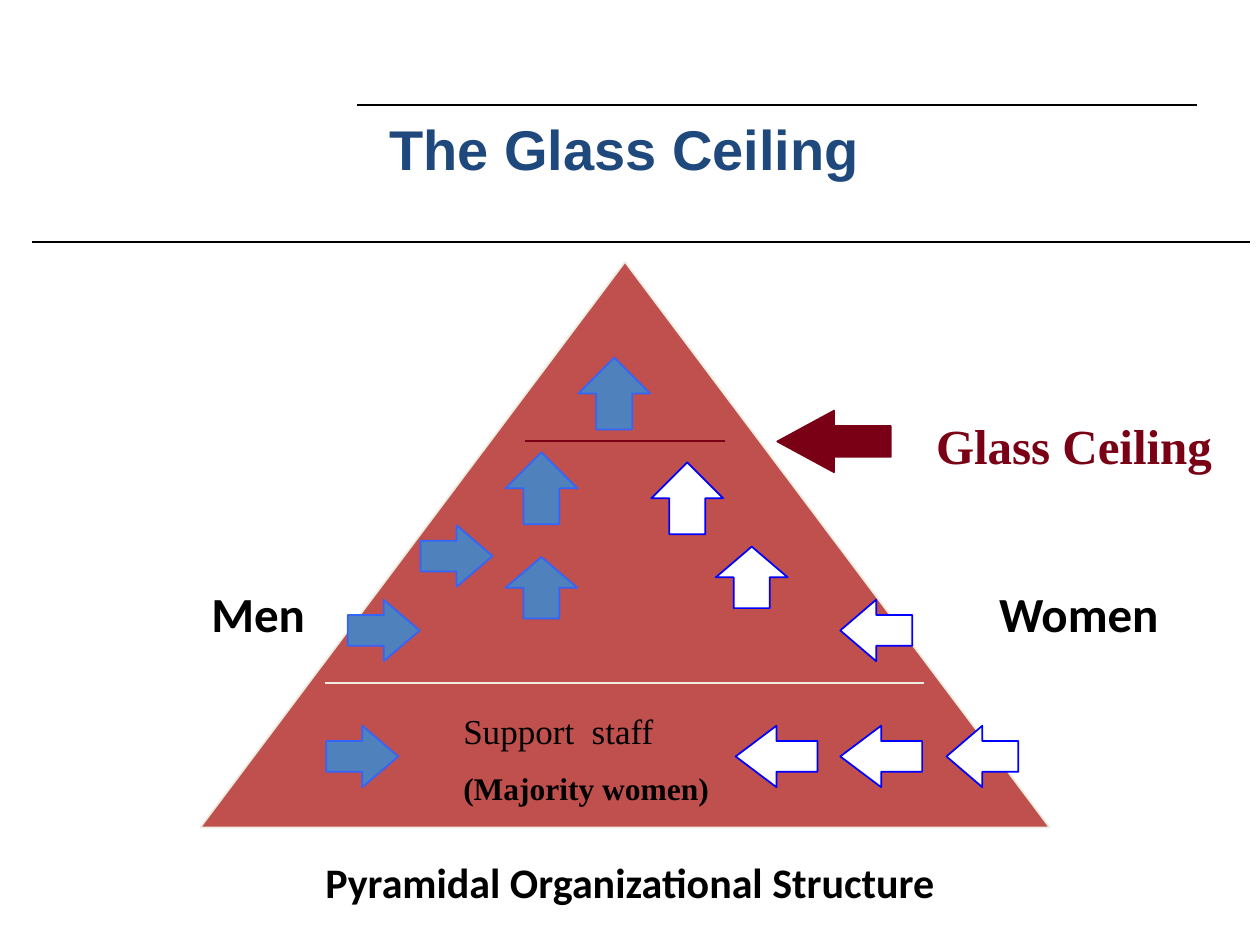
from dataclasses import dataclass

from lxml import etree
from pptx import Presentation
from pptx.dml.color import RGBColor
from pptx.enum.shapes import MSO_CONNECTOR, MSO_SHAPE
from pptx.enum.text import MSO_ANCHOR, PP_ALIGN
from pptx.oxml.ns import qn
from pptx.util import Cm, Pt

RIGHT, LEFT, UP = MSO_SHAPE.RIGHT_ARROW, MSO_SHAPE.LEFT_ARROW, MSO_SHAPE.UP_ARROW
TRIANGLE = MSO_SHAPE.ISOSCELES_TRIANGLE
STRAIGHT = MSO_CONNECTOR.STRAIGHT
ALIGN_LEFT, ALIGN_CENTER = PP_ALIGN.LEFT, PP_ALIGN.CENTER
MIDDLE = MSO_ANCHOR.MIDDLE


@dataclass(frozen=True)
class Theme:
    black: RGBColor = RGBColor(0x00, 0x00, 0x00)
    navy: RGBColor = RGBColor(0x1F, 0x49, 0x7D)
    red: RGBColor = RGBColor(0xC0, 0x50, 0x4D)
    cream: RGBColor = RGBColor(0xEE, 0xEC, 0xE1)
    maroon: RGBColor = RGBColor(0x79, 0x00, 0x15)
    men_fill: RGBColor = RGBColor(0x4F, 0x81, 0xBD)
    men_line: RGBColor = RGBColor(0x33, 0x65, 0xFB)
    women_fill: RGBColor = RGBColor(0xFF, 0xFF, 0xFF)
    women_line: RGBColor = RGBColor(0x00, 0x00, 0xFF)
    heading: str = "Arial"
    sans: str = "Calibri"
    serif: str = "Times New Roman"
    title_size: Pt = Pt(32)
    label_size: Pt = Pt(28)
    caption_size: Pt = Pt(24)
    staff_size: Pt = Pt(20)
    note_size: Pt = Pt(18)
    stroke: Pt = Pt(1)


theme = Theme()
prs = Presentation()
prs.slide_width, prs.slide_height = Cm(25.4), Cm(19.05)
slide = prs.slides.add_slide(prs.slide_layouts[5])


def add_figure(kind, box, fill, line):
    figure = slide.shapes.add_shape(kind, *map(Cm, box))
    figure.shadow.inherit = False
    figure.fill.solid()
    figure.fill.fore_color.rgb = fill
    figure.line.color.rgb = line
    figure.line.width = theme.stroke
    return figure


def style_text(paragraph, text, face, size, color, bold, align):
    paragraph.text = text
    paragraph.alignment = align
    font = paragraph.font
    font.name, font.size, font.bold = face, size, bold
    font.color.rgb = color


title = slide.shapes.title
title.left, title.top, title.width, title.height = map(Cm, (0.46, 1.12, 24.26, 3.73))
title.text_frame.vertical_anchor = MIDDLE
style_text(title.text_frame.paragraphs[0], "The Glass Ceiling", theme.heading,
           theme.title_size, theme.navy, True, ALIGN_CENTER)

add_figure(TRIANGLE, (4.04, 5.28, 17.12, 11.4), theme.red, theme.cream)

for start, end, height, color in (
    (7.19, 24.13, 2.11, theme.black),
    (0.64, 25.2, 4.88, theme.black),
    (6.55, 18.62, 13.77, theme.cream),
    (10.59, 14.61, 8.89, theme.maroon),
):
    rule = slide.shapes.add_connector(STRAIGHT, Cm(start), Cm(height), Cm(end), Cm(height))
    rule.line.color.rgb = color
    rule.line.width = theme.stroke
    etree.SubElement(rule._element.spPr, qn("a:effectLst"))

men_steps = (
    (RIGHT, (6.58, 14.63, 1.45, 1.24)),
    (RIGHT, (7.01, 12.09, 1.45, 1.24)),
    (RIGHT, (8.48, 10.59, 1.45, 1.24)),
    (UP, (10.19, 11.23, 1.45, 1.24)),
    (UP, (10.19, 9.12, 1.45, 1.45)),
    (UP, (11.66, 7.21, 1.45, 1.45)),
)
women_steps = (
    (LEFT, (19.08, 14.63, 1.45, 1.24)),
    (LEFT, (16.94, 14.63, 1.65, 1.24)),
    (LEFT, (14.83, 14.63, 1.65, 1.24)),
    (LEFT, (16.94, 12.09, 1.45, 1.24)),
    (UP, (14.43, 11.02, 1.45, 1.24)),
    (UP, (13.13, 9.32, 1.45, 1.45)),
)
ceiling_pointer = ((LEFT, (15.67, 8.28, 2.29, 1.24)),)

for steps, fill, line in (
    (men_steps, theme.men_fill, theme.men_line),
    (women_steps, theme.women_fill, theme.women_line),
    (ceiling_pointer, theme.maroon, theme.maroon),
):
    for direction, box in steps:
        arrow = add_figure(direction, box, fill, line)
        width, height = box[2:]
        length = height if direction == UP else width
        arrow.adjustments[0] = 0.5
        arrow.adjustments[1] = length / 2 / min(width, height)

for box, face, color, align, lines in (
    ((9.09, 14.17, 5.54, 2.26), theme.serif, theme.black, ALIGN_LEFT,
     (("Support  staff", theme.staff_size, False),
      ("(Majority women)", theme.note_size, True))),
    ((0, 17.15, 25.4, 1.27), theme.sans, theme.black, ALIGN_CENTER,
     (("Pyramidal Organizational Structure", theme.caption_size, True),)),
    ((18.62, 8.26, 6.58, 1.45), theme.serif, theme.maroon, ALIGN_LEFT,
     (("Glass Ceiling", theme.label_size, True),)),
    ((19.89, 11.63, 4.04, 1.45), theme.sans, theme.black, ALIGN_LEFT,
     (("Women", theme.label_size, True),)),
    ((4.01, 11.63, 2.57, 1.45), theme.sans, theme.black, ALIGN_LEFT,
     (("Men", theme.label_size, True),)),
):
    frame = slide.shapes.add_textbox(*map(Cm, box)).text_frame
    frame.word_wrap = True
    for index, (text, size, bold) in enumerate(lines):
        paragraph = frame.add_paragraph() if index else frame.paragraphs[0]
        style_text(paragraph, text, face, size, color, bold, align)
        if index:
            paragraph.space_before = Pt(10)

prs.save("out.pptx")
